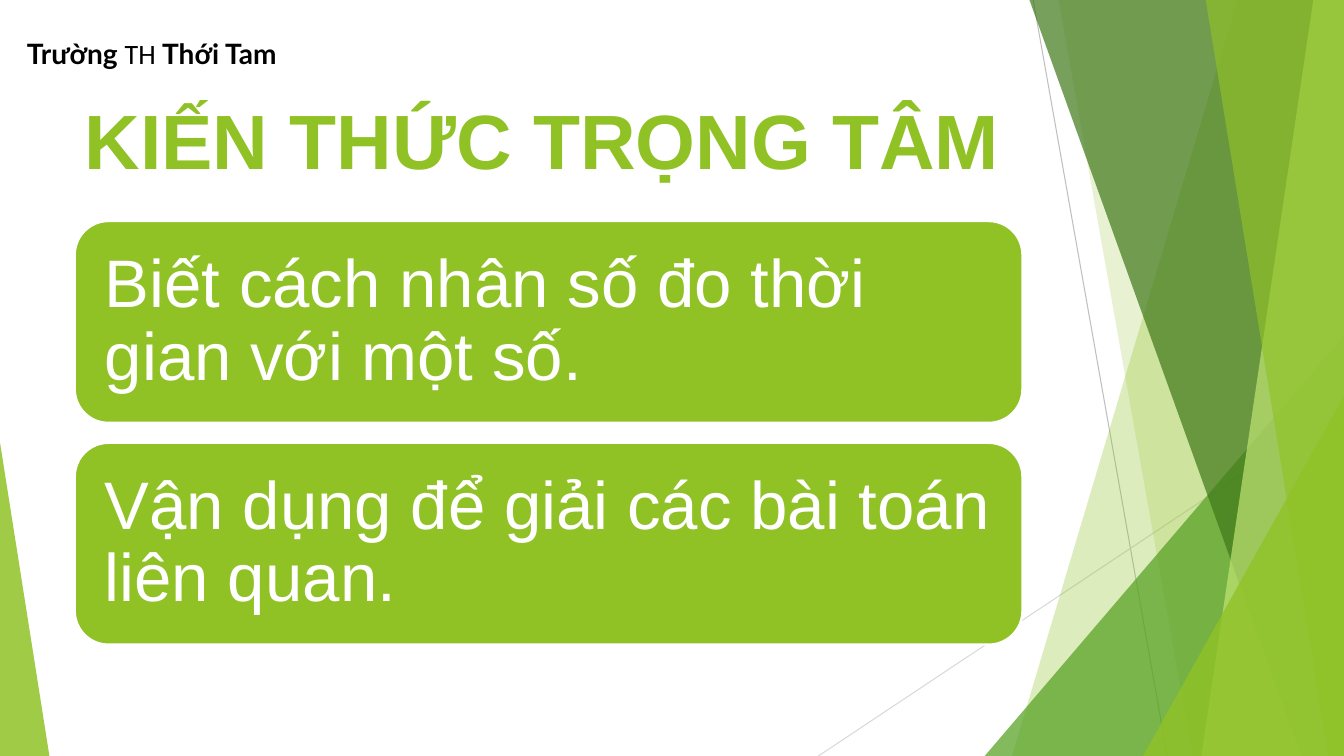
"""Build the key-knowledge slide with its faceted green side panel."""
from dataclasses import dataclass

import pptx
import pptx.dml.color
import pptx.enum.shapes
import pptx.enum.text
import pptx.oxml.ns
import pptx.shapes.autoshape
import pptx.slide
import pptx.text.text
import pptx.util
from lxml import etree

Pt = pptx.util.Pt
RGBColor = pptx.dml.color.RGBColor
MSO_SHAPE = pptx.enum.shapes.MSO_SHAPE
MSO_ANCHOR = pptx.enum.text.MSO_ANCHOR
PP_ALIGN = pptx.enum.text.PP_ALIGN
qn = pptx.oxml.ns.qn

WHITE = RGBColor(0xFF, 0xFF, 0xFF)
BLACK = RGBColor(0, 0, 0)
LIME = RGBColor(0x90, 0xC2, 0x26)
PALE_LIME = RGBColor(0xC0, 0xE4, 0x74)
GREEN = RGBColor(0x54, 0xA0, 0x21)
DARK_GREEN = RGBColor(0x3F, 0x78, 0x19)
GREY = RGBColor(0xBF, 0xBF, 0xBF)
LIGHT_GREY = RGBColor(0xD9, 0xD9, 0xD9)

WIDTH, HEIGHT = 960, 540
BAND_TOP = -0.7
CARD_LEFT, CARD_TOP, CARD_WIDTH, CARD_HEIGHT = 53.5, 158, 676.8, 144
CARD_PITCH = 158.4
CARD_INSET = 14.4


@dataclass
class Ray:
    x1: float
    y1: float
    x2: float
    y2: float
    color: RGBColor


@dataclass
class Band:
    top_x: float
    bottom_x: float
    color: RGBColor
    opacity: int


@dataclass
class Wedge:
    left: float
    top: float
    width: float
    apex: float
    color: RGBColor
    opacity: int


@dataclass
class TextRun:
    text: str
    font: str
    size: float
    color: RGBColor
    bold: bool = False


RAYS = [
    Ray(738, 0, 833.8, HEIGHT, GREY),
    Ray(WIDTH, 290.2, 584.6, HEIGHT, LIGHT_GREY),
]
FACETS = [
    Band(884.2, 722.9, LIME, 30),
    Band(756, 851.8, LIME, 20),
    Wedge(703.4, 239.8, 256.6, 1, GREEN, 72),
    Band(735.1, 929.5, DARK_GREEN, 70),
    Band(938.2, 858.2, PALE_LIME, 70),
    Band(861.1, 949, LIME, 65),
    Wedge(816.5, 283, 143.5, 1, LIME, 80),
    Wedge(0, 316.1, 35.3, 0, LIME, 85),
]
CARDS = [
    "Biết cách nhân số đo thời gian với một số.",
    "Vận dụng để giải các bài toán liên quan.",
]
TITLE = [TextRun("KIẾN THỨC TRỌNG TÂM", "Arial", 55, LIME, True)]
SCHOOL = [
    TextRun("Trường ", "Lato", 20, BLACK, True),
    TextRun("TH ", "Calibri", 20, BLACK),
    TextRun("Thới Tam", "Lato", 20, BLACK, True),
]


def add_ray(s: pptx.slide.Slide, ray: Ray) -> None:
    """Draw one thin line of the panel."""
    line = s.shapes.add_connector(
        pptx.enum.shapes.MSO_CONNECTOR.STRAIGHT,
        Pt(ray.x1), Pt(ray.y1), Pt(ray.x2), Pt(ray.y2))
    line.line.color.rgb = ray.color
    line.line.width = Pt(0.75)
    etree.SubElement(line._element.spPr, qn("a:effectLst"))


def add_facet(s: pptx.slide.Slide, facet: Band | Wedge) -> None:
    """Draw one translucent band or wedge of the panel."""
    if isinstance(facet, Band):
        builder = s.shapes.build_freeform(Pt(facet.top_x), Pt(BAND_TOP), 1.0)
        corners = [(WIDTH, BAND_TOP), (WIDTH, HEIGHT), (facet.bottom_x, HEIGHT)]
        builder.add_line_segments([(Pt(x), Pt(y)) for x, y in corners], close=True)
        sp = builder.convert_to_shape()
    else:
        sp = s.shapes.add_shape(
            MSO_SHAPE.ISOSCELES_TRIANGLE, Pt(facet.left), Pt(facet.top),
            Pt(facet.width), Pt(HEIGHT - facet.top))
        sp.adjustments[0] = facet.apex
    sp.shadow.inherit = False
    sp.line.fill.background()
    sp.fill.solid()
    sp.fill.fore_color.rgb = facet.color
    color = sp._element.spPr.find(qn("a:solidFill")).find(qn("a:srgbClr"))
    etree.SubElement(color, qn("a:alpha"), val=str(facet.opacity * 1000))


def format_run(r: pptx.text.text._Run, style: TextRun) -> None:
    """Apply a text style to a run."""
    r.font.name = style.font
    r.font.size = Pt(style.size)
    r.font.bold = style.bold
    r.font.color.rgb = style.color


def add_label(s: pptx.slide.Slide, left: float, top: float, width: float,
              height: float, runs: list[TextRun], anchor: MSO_ANCHOR) -> None:
    """Add a one-line text box made of styled runs."""
    tf = s.shapes.add_textbox(Pt(left), Pt(top), Pt(width), Pt(height)).text_frame
    tf.word_wrap = True
    tf.vertical_anchor = anchor
    p = tf.paragraphs[0]
    for style in runs:
        r = p.add_run()
        r.text = style.text
        format_run(r, style)


def add_card(s: pptx.slide.Slide, top: float, text: str) -> None:
    """Add one rounded card with its statement."""
    sp = s.shapes.add_shape(
        MSO_SHAPE.ROUNDED_RECTANGLE, Pt(CARD_LEFT), Pt(top),
        Pt(CARD_WIDTH), Pt(CARD_HEIGHT))
    sp.shadow.inherit = False
    sp.fill.solid()
    sp.fill.fore_color.rgb = LIME
    sp.line.color.rgb = WHITE
    sp.line.width = Pt(1.5)
    tf = sp.text_frame
    tf.text = text
    tf.word_wrap = True
    tf.vertical_anchor = MSO_ANCHOR.MIDDLE
    tf.margin_left = tf.margin_right = Pt(CARD_INSET)
    tf.margin_top = tf.margin_bottom = Pt(CARD_INSET)
    p = tf.paragraphs[0]
    p.alignment = PP_ALIGN.LEFT
    p.line_spacing = 0.9
    format_run(p.runs[0], TextRun(text, "Arial", 48, WHITE))


def main() -> None:
    """Build and save the presentation."""
    prs = pptx.Presentation()
    prs.slide_width, prs.slide_height = Pt(WIDTH), Pt(HEIGHT)
    s = prs.slides.add_slide(prs.slide_layouts[6])
    for ray in RAYS:
        add_ray(s, ray)
    for facet in FACETS:
        add_facet(s, facet)
    add_label(s, CARD_LEFT, 56.9, CARD_WIDTH, 85, TITLE, MSO_ANCHOR.MIDDLE)
    for i, text in enumerate(CARDS):
        add_card(s, CARD_TOP + i * CARD_PITCH, text)
    add_label(s, 12.2, 22.3, 279.4, 31.7, SCHOOL, MSO_ANCHOR.TOP)
    prs.save("out.pptx")


if __name__ == "__main__":
    main()
